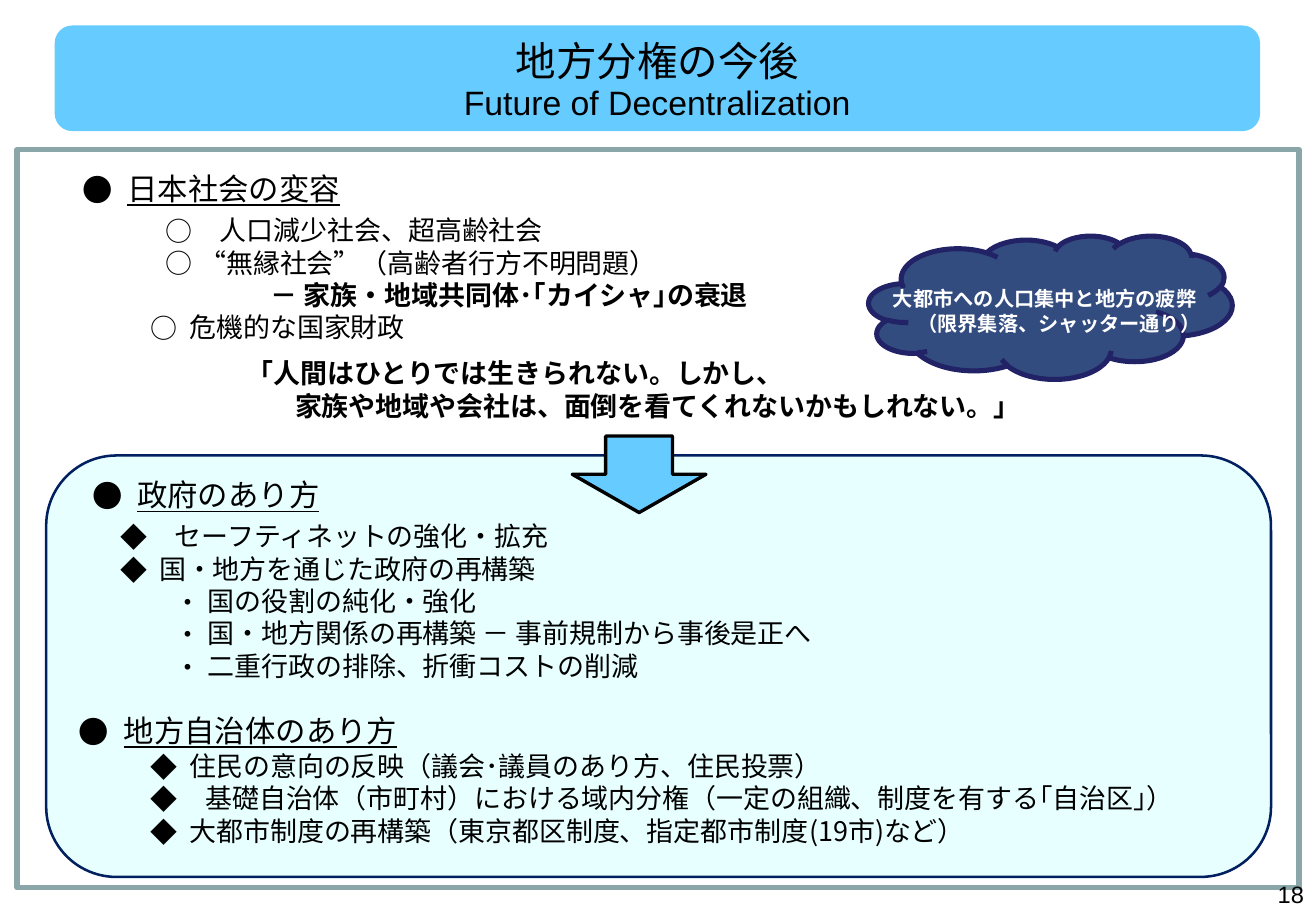
from dataclasses import dataclass
from typing import Optional

from lxml.etree import SubElement
from pptx import Presentation
from pptx.dml.color import RGBColor
from pptx.enum.shapes import MSO_SHAPE as Preset
from pptx.enum.text import MSO_ANCHOR as Anchor, MSO_AUTO_SIZE as AutoSize, PP_ALIGN as Align
from pptx.oxml.ns import qn
from pptx.util import Inches, Pt

# The grid has square cells: 108.3 columns by 75 rows.
CELL = Inches(0.1)
COLUMNS, ROWS = 108.3, 75
INSET = 1
HEADING_GAP = 3.7
COMPARISON_LAYOUT = 4
LATIN, JAPANESE = "Arial", "Noto Sans CJK JP"
BLACK, WHITE, SKY, NAVY = "000000", "FFFFFF", "66CCFF", "002060"


@dataclass
class Area:
    column: float
    row: float
    columns: float
    rows: float


@dataclass
class Panel:
    preset: Preset
    area: Area
    fill: Optional[str] = None
    opacity: int = 100
    line: Optional[str] = None
    line_width: float = 0


@dataclass
class Style:
    size: float
    pitch: float
    font: str = JAPANESE
    color: str = BLACK
    bold: bool = False
    underline: bool = False
    align: Align = Align.LEFT


@dataclass
class Line:
    """Text starts at column `start`; its bullet, if any, at column `bullet_at`."""
    text: str
    style: Style
    start: Optional[float] = None
    bullet: str = ""
    bullet_at: float = 0


@dataclass
class Block:
    area: Area
    lines: list[Line]
    anchor: Anchor = Anchor.TOP


ITEM = Style(16, 19.2)
STRONG = Style(16, 19.2, bold=True)
HEADING = Style(18, 24, LATIN, underline=True)
CLOUD = Style(12, 15, color=WHITE, bold=True)

BANNER = Area(4.5, 2.1, 99.2, 8.7)
PANELS = [
    Panel(Preset.ROUNDED_RECTANGLE, Area(3.8, 37.5, 100.8, 34.7), "CCFFFF", 45, NAVY, 1.5),
    Panel(Preset.ROUNDED_RECTANGLE, BANNER, SKY),
    Panel(Preset.RECTANGLE, Area(1.4, 12.3, 105.5, 60.8), line="8AA6A8", line_width=3),
    Panel(Preset.CLOUD, Area(71.5, 19.4, 29.9, 11.8), NAVY, 80, "222267", 3),
    Panel(Preset.DOWN_ARROW, Area(47.1, 35.9, 11, 6.3), SKY, line=BLACK, line_width=2),
]

TITLE = Block(BANNER, [
    Line("地方分権の今後", Style(24, 30, LATIN, align=Align.CENTER)),
    Line("Future of Decentralization", Style(20, 22, LATIN, align=Align.CENTER)),
], Anchor.MIDDLE)

LISTS = [
    Block(Area(7.7, 17.1, 92.9, 17.2), [
        Line("人口減少社会、超高齢社会", ITEM, 18.1, "○", 13.6),
        Line("“無縁社会”（高齢者行方不明問題）", ITEM, 16.4, "○", 13.6),
        Line("－ 家族・地域共同体･｢カイシャ｣の衰退", STRONG, 22.3),
        Line("危機的な国家財政", ITEM, 15.6, "○", 12.4),
    ]),
    Block(Area(3.8, 42.3, 100.8, 14.5), [
        Line("セーフティネットの強化・拡充", ITEM, 14.4, "◆", 9.9),
        Line("国・地方を通じた政府の再構築", ITEM, 13.1, "◆", 9.9),
        Line("国の役割の純化・強化", ITEM, 17.1, "・", 14.4),
        Line("国・地方関係の再構築 － 事前規制から事後是正へ", ITEM, 17.1, "・", 14.4),
        Line("二重行政の排除、折衝コストの削減", ITEM, 17.1, "・", 14.4),
    ]),
    Block(Area(3.8, 61.2, 100.8, 9.1), [
        Line("住民の意向の反映（議会･議員のあり方、住民投票）", ITEM, 15.6, "◆", 12.4),
        Line("基礎自治体（市町村）における域内分権（一定の組織、制度を有する｢自治区｣）",
             ITEM, 16.9, "◆", 12.4),
        Line("大都市制度の再構築（東京都区制度、指定都市制度(19市)など）", ITEM, 15.6, "◆", 12.4),
    ]),
]


def heading(text: str, area: Area, bullet_at: float) -> Block:
    return Block(area, [Line(text, HEADING, bullet_at + HEADING_GAP, "●", bullet_at)])


TEXT_BOXES = [
    heading("日本社会の変容", Area(2.8, 13.2, 105.5, 4.4), 6.8),
    heading("政府のあり方", Area(0, 38.4, 105.5, 4.4), 7.6),
    heading("地方自治体のあり方", Area(0, 57.8, 105.5, 4.4), 6.5),
    Block(Area(70.7, 23, 35.4, 5.2), [
        Line("大都市への人口集中と地方の疲弊", CLOUD, 73.5),
        Line("（限界集落、シャッター通り）", CLOUD, 75.5),
    ]),
    Block(Area(19.3, 28.9, 89, 6.4), [
        Line("「人間はひとりでは生きられない。しかし、", STRONG, 20.3),
        Line("家族や地域や会社は、面倒を看てくれないかもしれない。」", STRONG, 24.3),
    ]),
    Block(Area(83.1, 72.4, 25.2, 2.6),
          [Line("18", Style(14, 16, LATIN, align=Align.RIGHT))], Anchor.MIDDLE),
]


def cells(count: float) -> int:
    return round(count * CELL)


def bounds(area: Area) -> tuple[int, int, int, int]:
    return cells(area.column), cells(area.row), cells(area.columns), cells(area.rows)


def paint(color_format, color: str) -> None:
    color_format.rgb = RGBColor.from_string(color)


def draw_panel(slide, panel: Panel) -> None:
    shape = slide.shapes.add_shape(panel.preset, *bounds(panel.area))
    shape.shadow.inherit = False
    if panel.fill:
        shape.fill.solid()
        paint(shape.fill.fore_color, panel.fill)
        color = shape.element.spPr.find(f"{qn('a:solidFill')}/{qn('a:srgbClr')}")
        SubElement(color, qn("a:alpha"), val=str(panel.opacity * 1000))
    else:
        shape.fill.background()
    if panel.line:
        paint(shape.line.color, panel.line)
        shape.line.width = Pt(panel.line_width)
    else:
        shape.line.fill.background()


def write_line(paragraph, line: Line, text_left: float) -> None:
    style = line.style
    paragraph.alignment = style.align
    paragraph.line_spacing = Pt(style.pitch)
    paragraph.space_before = paragraph.space_after = Pt(0)

    start = text_left if line.start is None else line.start
    properties = paragraph._p.get_or_add_pPr()
    properties.set("marL", str(cells(start - text_left)))
    properties.set("indent", str(cells(line.bullet_at - start) if line.bullet else 0))
    if line.bullet:
        SubElement(properties, qn("a:buFont"), typeface=JAPANESE)
        SubElement(properties, qn("a:buChar"), char=line.bullet)
    else:
        SubElement(properties, qn("a:buNone"))

    run = paragraph.add_run()
    run.text = line.text
    run.font.size = Pt(style.size)
    run.font.bold = style.bold
    run.font.underline = style.underline
    paint(run.font.color, style.color)
    run.font.name = style.font
    SubElement(run._r.get_or_add_rPr(), qn("a:ea"), typeface=JAPANESE)


def fill_block(shape, block: Block) -> None:
    shape.left, shape.top, shape.width, shape.height = bounds(block.area)
    frame = shape.text_frame
    frame.word_wrap = True
    frame.auto_size = AutoSize.NONE
    frame.vertical_anchor = block.anchor
    frame.margin_left = frame.margin_right = cells(INSET)
    frame.margin_top = frame.margin_bottom = cells(INSET / 2)
    for index, line in enumerate(block.lines):
        paragraph = frame.add_paragraph() if index else frame.paragraphs[0]
        write_line(paragraph, line, block.area.column + INSET)


def main() -> None:
    presentation = Presentation()
    presentation.slide_width, presentation.slide_height = cells(COLUMNS), cells(ROWS)
    slide = presentation.slides.add_slide(presentation.slide_layouts[COMPARISON_LAYOUT])
    title, *bodies = list(slide.placeholders)

    for panel in PANELS:
        draw_panel(slide, panel)
    for placeholder, block in zip([title, *bodies], [TITLE, *LISTS]):
        fill_block(placeholder, block)
        slide.shapes.element.append(placeholder.element)  # brings the text above the panels
    for unused in bodies[len(LISTS):]:
        slide.shapes.element.remove(unused.element)
    for block in TEXT_BOXES:
        fill_block(slide.shapes.add_textbox(*bounds(block.area)), block)

    presentation.save("out.pptx")


if __name__ == "__main__":
    main()
